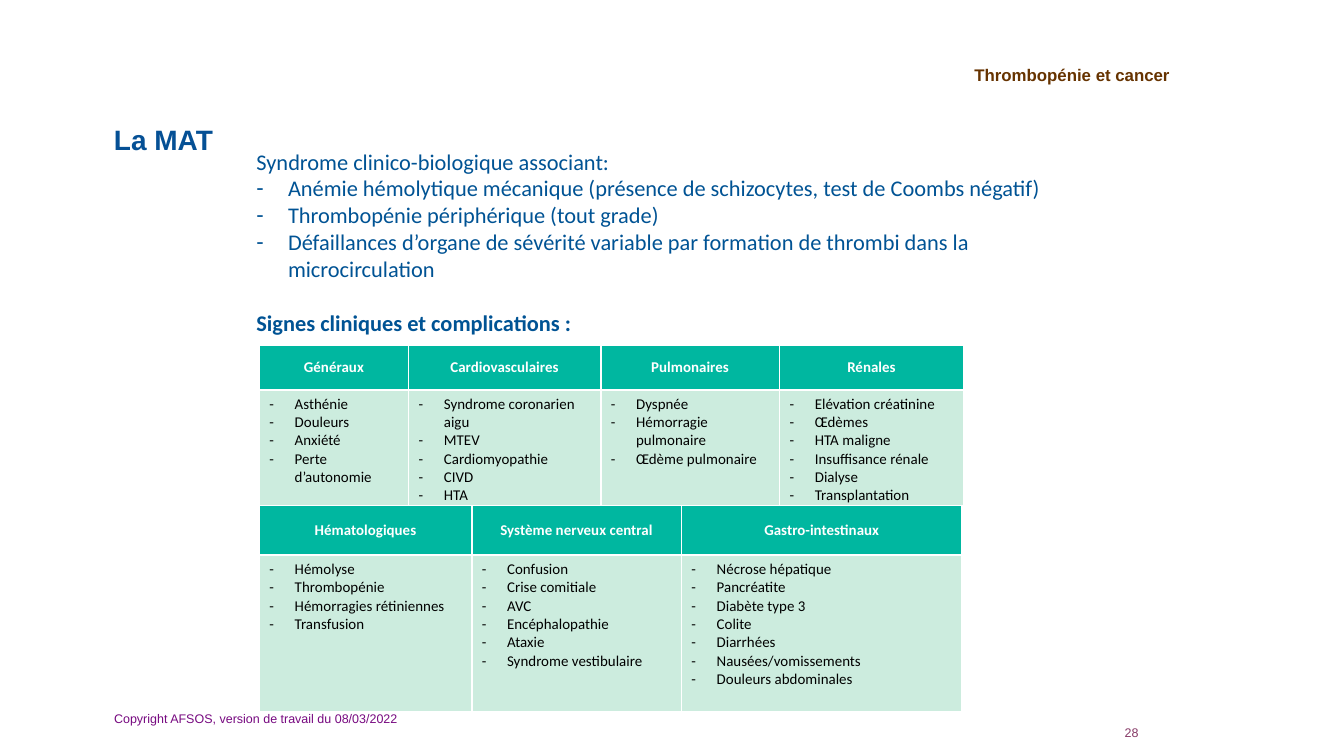
from lxml.etree import SubElement
from pptx import Presentation
from pptx.dml.color import RGBColor
from pptx.enum.text import MSO_ANCHOR, PP_ALIGN
from pptx.oxml import parse_xml
from pptx.oxml.ns import nsdecls, qn
from pptx.util import Inches, Pt

UNIT = 0.1  # the slide is a grid of 100 columns by 56.25 rows
WHITE, BLACK, TEAL, MINT = "FFFFFF", "000000", "00B7A0", "CCECDE"

BODY = dict(name="Calibri", size=12, color="005394")
HEAD = dict(name="Calibri", size=8, color=WHITE, bold=True)
ITEM = dict(name="Calibri", size=8, color=BLACK, bold=False)

CRITERIA = [
    "Anémie hémolytique mécanique (présence de schizocytes, test de Coombs négatif)",
    "Thrombopénie périphérique (tout grade)",
    "Défaillances d’organe de sévérité variable par formation de thrombi dans la microcirculation",
]
# heading -> (width in columns, signs)
UPPER_SIGNS = {
    "Généraux": (11.1, ["Asthénie", "Douleurs", "Anxiété", "Perte d’autonomie"]),
    "Cardiovasculaires": (14.3, ["Syndrome coronarien aigu", "MTEV", "Cardiomyopathie",
                                 "CIVD", "HTA"]),
    "Pulmonaires": (13.3, ["Dyspnée", "Hémorragie pulmonaire", "Œdème pulmonaire"]),
    "Rénales": (13.7, ["Elévation créatinine", "Œdèmes", "HTA maligne",
                       "Insuffisance rénale", "Dialyse", "Transplantation"]),
}
LOWER_SIGNS = {
    "Hématologiques": (15.8, ["Hémolyse", "Thrombopénie", "Hémorragies rétiniennes",
                              "Transfusion"]),
    "Système nerveux central": (15.6, ["Confusion", "Crise comitiale", "AVC",
                                       "Encéphalopathie", "Ataxie", "Syndrome vestibulaire"]),
    "Gastro-intestinaux": (20.9, ["Nécrose hépatique", "Pancréatite", "Diabète type 3",
                                  "Colite", "Diarrhées", "Nausées/vomissements",
                                  "Douleurs abdominales"]),
}


def grid(n):
    return Inches(n * UNIT)


def rgb(value):
    return RGBColor.from_string(value)


def write(p, text, style):
    r = p.add_run()
    r.text = text
    for key, value in style.items():
        if key == "color":
            r.font.color.rgb = rgb(value)
        else:
            setattr(r.font, key, Pt(value) if key == "size" else value)


def add_dash(p, indent, font):
    """Give the paragraph a dash bullet with a hanging indent."""
    pPr = p._p.get_or_add_pPr()
    pPr.set("marL", str(grid(indent)))
    pPr.set("indent", str(-grid(indent)))
    SubElement(pPr, qn("a:buFont")).set("typeface", font)
    SubElement(pPr, qn("a:buChar")).set("char", "-")


def next_paragraph(tf, first):
    return tf.paragraphs[0] if first else tf.add_paragraph()


def add_text_box(s, box, anchor=MSO_ANCHOR.TOP):
    tf = s.shapes.add_textbox(*map(grid, box)).text_frame
    tf.word_wrap = True
    tf.vertical_anchor = anchor
    return tf


def add_label(s, box, text, style, align=PP_ALIGN.LEFT):
    tf = add_text_box(s, box, MSO_ANCHOR.MIDDLE)
    tf.paragraphs[0].alignment = align
    write(tf.paragraphs[0], text, style)


def add_page_number(s, box, text, style):
    tf = add_text_box(s, box)
    for side in ("left", "top", "right", "bottom"):
        setattr(tf, f"margin_{side}", 0)
    p = tf.paragraphs[0]
    p.alignment = PP_ALIGN.CENTER
    p._p.get_or_add_pPr().set("marL", str(grid(0.4)))
    write(p, text, style)


def add_definition(s, box):
    tf = add_text_box(s, box)
    write(tf.paragraphs[0], "Syndrome clinico-biologique associant:", BODY)
    for text in CRITERIA:
        p = tf.add_paragraph()
        add_dash(p, 2.35, "Arial")
        write(p, text, BODY)
    p = tf.add_paragraph()
    p.space_before = Pt(14.6)
    write(p, "Signes cliniques et complications :", BODY | {"bold": True})


def style_cell(cell, fill):
    cell.fill.solid()
    cell.fill.fore_color.rgb = rgb(fill)
    cell.margin_left = cell.margin_right = grid(0.75)
    cell.margin_top = cell.margin_bottom = grid(0.38)
    tcPr = cell._tc.get_or_add_tcPr()
    for i, side in enumerate("LRTB"):
        tcPr.insert(i, parse_xml(
            f'<a:ln{side} {nsdecls("a")} w="{int(Pt(1))}"><a:solidFill>'
            f'<a:srgbClr val="{WHITE}"/></a:solidFill></a:ln{side}>'))


def add_signs_table(s, left, top, heights, signs):
    width = sum(w for w, _ in signs.values())
    table = s.shapes.add_table(2, len(signs), *map(grid, (left, top, width, sum(heights)))).table
    for row, height in zip(table.rows, heights):
        row.height = grid(height)
    for i, (heading, (w, items)) in enumerate(signs.items()):
        table.columns[i].width = grid(w)
        head, body = table.cell(0, i), table.cell(1, i)
        style_cell(head, TEAL)
        style_cell(body, MINT)
        head.vertical_anchor = MSO_ANCHOR.MIDDLE
        p = head.text_frame.paragraphs[0]
        p.alignment = PP_ALIGN.CENTER
        write(p, heading, HEAD)
        for n, item in enumerate(items):
            p = next_paragraph(body.text_frame, n == 0)
            add_dash(p, 1.88, "Calibri")
            write(p, item, ITEM)


def main():
    prs = Presentation()
    prs.slide_width, prs.slide_height = grid(100), grid(56.25)
    s = prs.slides.add_slide(prs.slide_layouts[6])
    add_label(s, (58.7, 3.3, 29.3, 4.5), "Thrombopénie et cancer",
              dict(name="Arial", size=9, color="663300", bold=True), PP_ALIGN.RIGHT)
    add_label(s, (7.5, 6.9, 85, 6.9), "La MAT",
              dict(name="Arial", size=15, color="055095", bold=True))
    add_page_number(s, (82.4, 53.9, 3.2, 1.2), "28",
                    dict(name="Arial", size=6.75, color="863966"))
    add_definition(s, (18.1, 10.5, 61.4, 15.1))
    add_label(s, (7.5, 52, 33.8, 3), "Copyright AFSOS, version de travail du 08/03/2022",
              dict(name="Arial", size=6.75, color="770980"))
    add_signs_table(s, 19.3, 25.7, (3.3, 8.6), UPPER_SIGNS)
    add_signs_table(s, 19.3, 37.6, (3.7, 11.7), LOWER_SIGNS)
    prs.save("out.pptx")


if __name__ == "__main__":
    main()
